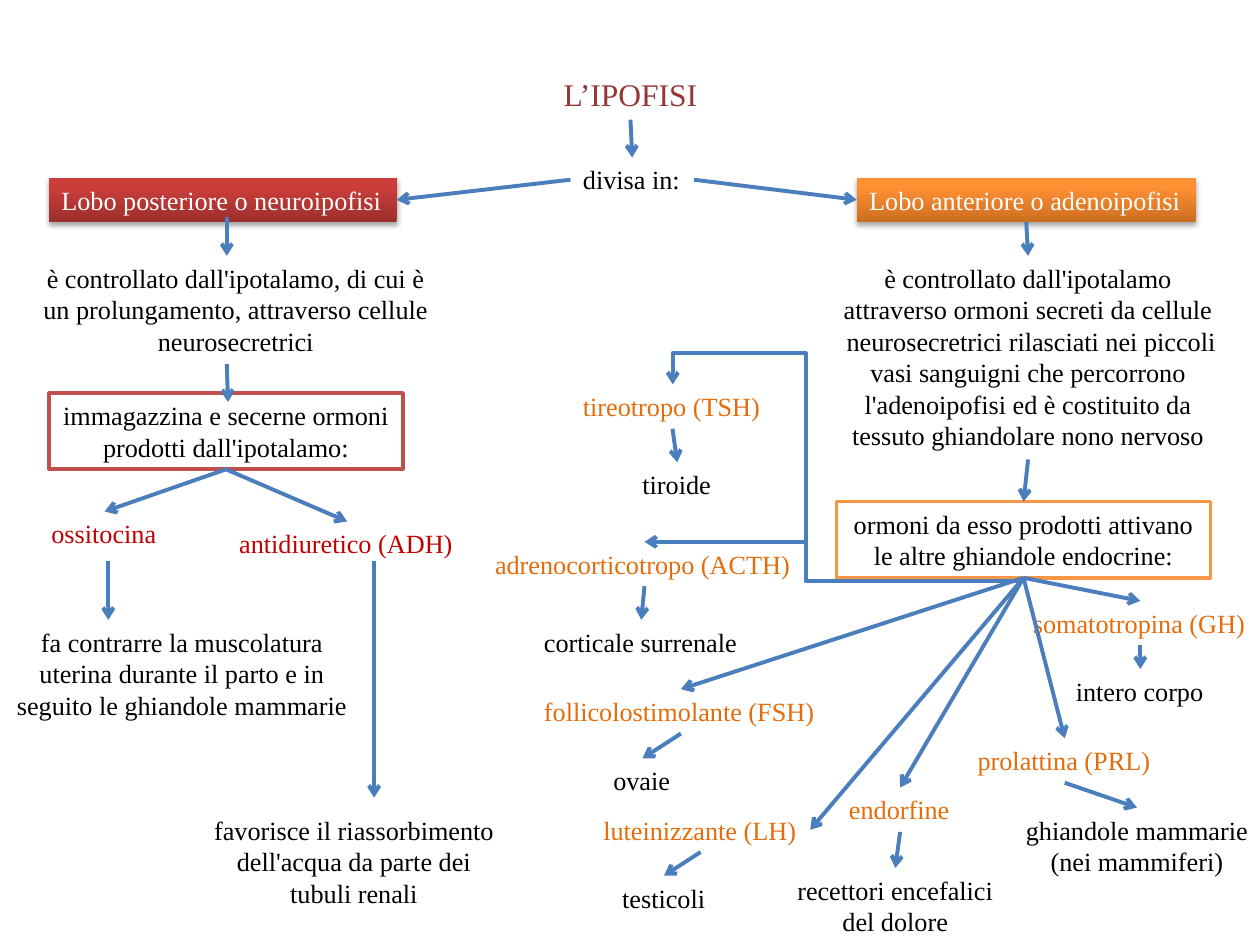
from dataclasses import dataclass

from lxml import etree
from pptx import Presentation
from pptx.dml.color import RGBColor
from pptx.enum.shapes import MSO_CONNECTOR, MSO_SHAPE
from pptx.enum.text import MSO_AUTO_SIZE, PP_ALIGN
from pptx.oxml.ns import qn
from pptx.util import Pt

STRAIGHT, ELBOW = MSO_CONNECTOR.STRAIGHT, MSO_CONNECTOR.ELBOW
RECTANGLE = MSO_SHAPE.RECTANGLE
LEFT_ALIGN, CENTER_ALIGN = PP_ALIGN.LEFT, PP_ALIGN.CENTER
GROW = MSO_AUTO_SIZE.SHAPE_TO_FIT_TEXT
TOP, LEFT, BOTTOM, RIGHT = range(4)


@dataclass(frozen=True)
class Theme:
    font: str = "Times New Roman"
    body_size: float = 15
    title_size: float = 18
    line_height: float = 18.2
    padding: float = 7.2
    black: str = "000000"
    white: str = "FFFFFF"
    title: str = "953735"
    posterior: str = "C00000"
    anterior: str = "E46C0A"
    posterior_border: str = "C0504D"
    anterior_border: str = "F79646"
    posterior_gradient: tuple = ("9C2F2D", "CB3E3A")
    anterior_gradient: tuple = ("CC6E20", "FF9034")
    arrow: str = "4B7EBC"
    arrow_width: float = 2.25
    border_width: float = 2


THEME = Theme()

LABELS = {
    "divisa": ("divisa in:", 326, 90, 70.6, THEME.black),
    "tsh": ("tireotropo (TSH)", 326, 219.6, 116.6, THEME.anterior),
    "tiroide": ("tiroide", 360, 264.2, 54, THEME.black),
    "acth": ("adrenocorticotropo (ACTH)", 275.8, 309.6, 185, THEME.anterior),
    "corticale": ("corticale surrenale", 303.8, 354.2, 125.3, THEME.black),
    "fsh": ("follicolostimolante (FSH)", 303.8, 393.8, 170.6, THEME.anterior),
    "ovaie": ("ovaie", 343.4, 433.4, 47.5, THEME.black),
    "lh": ("luteinizzante (LH)", 337.7, 461.5, 125.3, THEME.anterior),
    "testicoli": ("testicoli", 348.5, 500.4, 61.9, THEME.black),
    "gh": ("somatotropina (GH)", 583.2, 343.4, 136.8, THEME.anterior),
    "corpo": ("intero corpo", 607.7, 382.3, 87.8, THEME.black),
    "prl": ("prolattina (PRL)", 551.5, 421.9, 113.8, THEME.anterior),
    "endorfine": ("endorfine", 478, 450, 72.7, THEME.anterior),
    "ossitocina": ("ossitocina", 22.3, 292.3, 74.9, THEME.posterior),
    "adh": ("antidiuretico (ADH)", 129.6, 298, 137.5, THEME.posterior),
}

DESCRIPTIONS = {
    "controllo_anteriore": (
        "è controllato dall'ipotalamo\nattraverso ormoni secreti da cellule\n"
        " neurosecretrici rilasciati nei piccoli \nvasi sanguigni che percorrono\n"
        "l'adenoipofisi ed è costituito da\ntessuto ghiandolare nono nervoso",
        472.3, 146.2, 230.4, 6),
    "controllo_posteriore": (
        "è controllato dall'ipotalamo, di cui è\n"
        "un prolungamento, attraverso cellule\nneurosecretrici",
        16.6, 146.2, 236.2, 3),
    "mammarie": ("ghiandole mammarie (nei mammiferi)", 568, 461.5, 163.4, 2),
    "recettori": ("recettori encefalici\ndel dolore", 438.5, 496, 146.2, 2),
    "muscolatura": (
        "fa contrarre la muscolatura uterina durante il parto e in seguito "
        "le ghiandole mammarie", 0, 354.2, 208, 3),
    "riassorbimento": (
        "favorisce il riassorbimento\ndell'acqua da parte dei\ntubuli renali",
        112.3, 461.5, 180, 3),
}

LOBES = {
    "anteriore": ("Lobo anteriore o adenoipofisi", 489.6, 101.5, 193.7,
                  THEME.anterior_gradient),
    "posteriore": ("Lobo posteriore o neuroipofisi", 28, 101.5, 198.7,
                   THEME.posterior_gradient),
}

HORMONE_BOXES = {
    "ormoni_anteriori": (
        "ormoni da esso prodotti attivano\nle altre ghiandole endocrine:",
        478, 286.6, 213.8, THEME.anterior_border),
    "ormoni_posteriori": (
        "immagazzina e secerne ormoni prodotti dall'ipotalamo:",
        28, 224.6, 202.3, THEME.posterior_border),
}

DOWNWARD_LINKS = [
    ("titolo", "divisa"), ("anteriore", "controllo_anteriore"),
    ("controllo_anteriore", "ormoni_anteriori"),
    ("ormoni_posteriori", "ossitocina"), ("ormoni_posteriori", "adh"),
    ("ormoni_anteriori", "fsh"), ("ormoni_anteriori", "endorfine"),
    ("ormoni_anteriori", "gh"), ("ormoni_anteriori", "prl"),
    ("tsh", "tiroide"), ("acth", "corticale"), ("fsh", "ovaie"),
    ("lh", "testicoli"), ("gh", "corpo"), ("prl", "mammarie"),
    ("endorfine", "recettori"),
]

SIDE_LINKS = [
    ("divisa", LEFT, "posteriore", RIGHT),
    ("divisa", RIGHT, "anteriore", LEFT),
    ("ormoni_anteriori", BOTTOM, "lh", RIGHT),
]

FREE_ARROWS = [
    (129.6, 123.8, 129.6, 146.2), (129.6, 208, 130.3, 229.7),
    (213.8, 320.4, 213.8, 455.8), (61.9, 320.4, 61.9, 354.2),
]


def color(value):
    return RGBColor.from_string(value)


def box_height(lines):
    return THEME.padding + THEME.line_height * lines


def write_text(shape, text, text_color, size, alignment, wrap):
    text_frame = shape.text_frame
    text_frame.text = text
    text_frame.word_wrap = wrap
    text_frame.auto_size = GROW
    for paragraph in text_frame.paragraphs:
        paragraph.alignment = alignment
        for run in paragraph.runs:
            run.font.name = THEME.font
            run.font.size = Pt(size)
            run.font.color.rgb = color(text_color)


def add_text(slide, text, x, y, width, text_color=THEME.black, lines=1,
             size=THEME.body_size, alignment=LEFT_ALIGN):
    shape = slide.shapes.add_textbox(Pt(x), Pt(y), Pt(width), Pt(box_height(lines)))
    write_text(shape, text, text_color, size, alignment, lines > 1)
    return shape


def add_rectangle(slide, x, y, width, lines):
    shape = slide.shapes.add_shape(
        RECTANGLE, Pt(x), Pt(y), Pt(width), Pt(box_height(lines)))
    shape.shadow.inherit = False
    return shape


def add_lobe(slide, text, x, y, width, gradient):
    shape = add_rectangle(slide, x, y, width, 1)
    shape.fill.gradient()
    shape.fill.gradient_angle = 90
    for stop, stop_color, position in zip(shape.fill.gradient_stops, gradient, (0, 0.8)):
        stop.color.rgb = color(stop_color)
        stop.position = position
    shape.line.fill.background()
    effects = shape._element.spPr.find(qn("a:effectLst"))
    shadow = etree.SubElement(effects, qn("a:outerShdw"), blurRad=str(Pt(3.1)),
                              dist=str(Pt(1.8)), dir="5400000", rotWithShape="0")
    shadow_color = etree.SubElement(shadow, qn("a:srgbClr"), val=THEME.black)
    etree.SubElement(shadow_color, qn("a:alpha"), val="35000")
    write_text(shape, text, THEME.white, THEME.body_size, LEFT_ALIGN, False)
    return shape


def add_hormone_box(slide, text, x, y, width, border):
    shape = add_rectangle(slide, x, y, width, 2)
    shape.fill.solid()
    shape.fill.fore_color.rgb = color(THEME.white)
    shape.line.color.rgb = color(border)
    shape.line.width = Pt(THEME.border_width)
    write_text(shape, text, THEME.black, THEME.body_size, CENTER_ALIGN, True)
    return shape


def add_arrow(slide, x1=0, y1=0, x2=0, y2=0, kind=STRAIGHT):
    arrow = slide.shapes.add_connector(kind, Pt(x1), Pt(y1), Pt(x2), Pt(y2))
    arrow.line.color.rgb = color(THEME.arrow)
    arrow.line.width = Pt(THEME.arrow_width)
    properties = arrow._element.spPr
    etree.SubElement(properties.find(qn("a:ln")), qn("a:tailEnd"), type="arrow")
    etree.SubElement(properties, qn("a:effectLst"))
    return arrow


def link(slide, start, start_side, end, end_side):
    arrow = add_arrow(slide)
    arrow.begin_connect(start, start_side)
    arrow.end_connect(end, end_side)


def add_bent_arrow(slide):
    arrow = add_arrow(slide, 540, 175, 429.1, 375.2, ELBOW)
    properties = arrow._element.spPr
    properties.find(qn("a:xfrm")).set("rot", "5400000")
    geometry = properties.find(qn("a:prstGeom"))
    geometry.set("prst", "bentConnector5")
    adjustments = geometry.find(qn("a:avLst"))
    for number, value in enumerate((-1500, 62100, 116200), 1):
        etree.SubElement(adjustments, qn("a:gd"), name=f"adj{number}", fmla=f"val {value}")


def main():
    presentation = Presentation()
    presentation.slide_width, presentation.slide_height = Pt(720), Pt(540)
    slide = presentation.slides.add_slide(presentation.slide_layouts[6])

    nodes = {"titolo": add_text(slide, "L’IPOFISI", 314.6, 39.6, 91.4, THEME.title,
                                size=THEME.title_size, alignment=CENTER_ALIGN)}
    nodes["titolo"].height = Pt(28.8)
    for name, label in LABELS.items():
        nodes[name] = add_text(slide, *label)
    for name, (text, x, y, width, lines) in DESCRIPTIONS.items():
        nodes[name] = add_text(slide, text, x, y, width, lines=lines, alignment=CENTER_ALIGN)
    for name, lobe in LOBES.items():
        nodes[name] = add_lobe(slide, *lobe)
    for name, box in HORMONE_BOXES.items():
        nodes[name] = add_hormone_box(slide, *box)

    for start, end in DOWNWARD_LINKS:
        link(slide, nodes[start], BOTTOM, nodes[end], TOP)
    for start, start_side, end, end_side in SIDE_LINKS:
        link(slide, nodes[start], start_side, nodes[end], end_side)
    for points in FREE_ARROWS:
        add_arrow(slide, *points)
    add_bent_arrow(slide)
    add_arrow(slide, 461.5, 309.6).end_connect(nodes["acth"], TOP)

    presentation.save("out.pptx")


if __name__ == "__main__":
    main()
